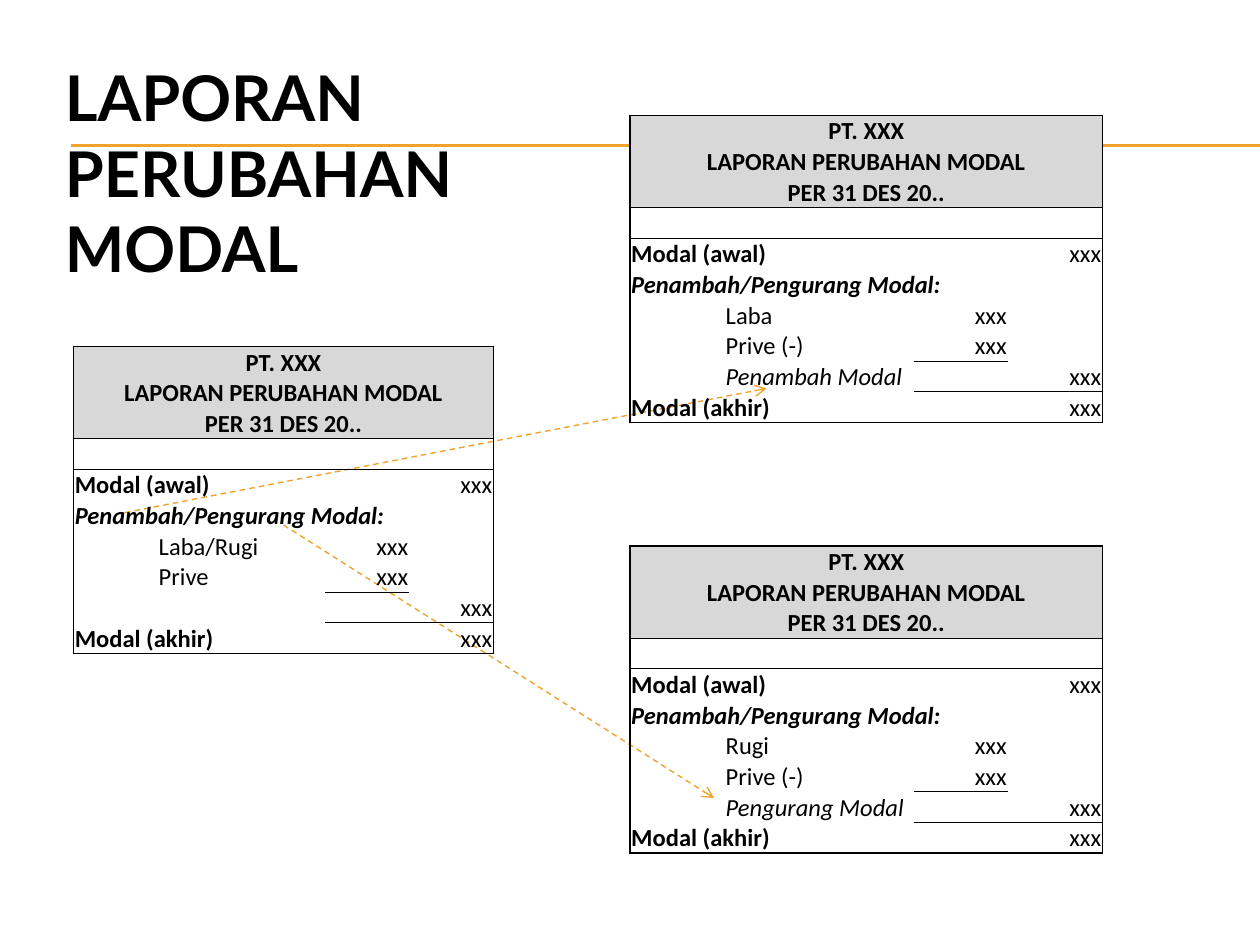
from dataclasses import dataclass

from lxml import etree
from pptx import Presentation
from pptx import util as u
from pptx.dml.color import RGBColor
from pptx.enum import dml, shapes, text
from pptx.oxml.ns import qn


@dataclass(frozen=True)
class Theme:
    ink: str = "000000"
    accent: str = "F0A22E"
    header: str = "D8D8D8"
    title_font: str = "Lato"
    body_font: str = "Calibri"
    title_size: int = 36
    body_size: int = 14
    rule_width: float = 0.75
    arrow_width: float = 0.79
    frame_width: float = 1
    sum_width: float = 0.5


NO_STYLE = "{2D5ABB26-0587-4C30-8999-92F81FD0307C}"
LEFT, CENTER, RIGHT = text.PP_ALIGN.LEFT, text.PP_ALIGN.CENTER, text.PP_ALIGN.RIGHT
COLUMNS, ROWS = 5, 10
HEADER_ROWS = 3
STATEMENT_HEIGHT = 29.25


def grid(count):
    """Length of a number of grid units, twelve to the inch."""
    return u.Inches(count / 12)


class Page:
    def __init__(self, deck, theme):
        self.theme = theme
        self.slide = deck.slides.add_slide(deck.slide_layouts[6])

    def span(self, para, words, font, size, bold=False, italic=False):
        span = para.add_run()
        span.text = words
        span.font.name, span.font.size = font, u.Pt(size)
        span.font.bold, span.font.italic = bold, italic
        span.font.color.rgb = RGBColor.from_string(self.theme.ink)

    def title(self, words, left, top, width, height):
        box = self.slide.shapes.add_textbox(*map(grid, (left, top, width, height)))
        frame = box.text_frame
        frame.word_wrap = True
        frame.auto_size = text.MSO_AUTO_SIZE.SHAPE_TO_FIT_TEXT
        self.span(frame.paragraphs[0], words, self.theme.title_font,
                  self.theme.title_size, bold=True)

    def line(self, start, end, width):
        line = self.slide.shapes.add_connector(
            shapes.MSO_CONNECTOR.STRAIGHT, *map(grid, start + end))
        line.line.color.rgb = RGBColor.from_string(self.theme.accent)
        line.line.width = u.Pt(width)
        etree.SubElement(line.element.spPr, qn("a:effectLst"))
        return line

    def arrow(self, start, end):
        arrow = self.line(start, end, self.theme.arrow_width)
        arrow.line.dash_style = dml.MSO_LINE.DASH
        outline = arrow.element.spPr.find(qn("a:ln"))
        etree.SubElement(outline, qn("a:tailEnd"), type="arrow")

    def entry(self, table, row, column, words, align=LEFT, width=1, **style):
        cell = table.cell(row, column)
        if width > 1:
            cell.merge(table.cell(row, column + width - 1))
        para = cell.text_frame.paragraphs[0]
        para.alignment = align
        self.span(para, words, self.theme.body_font, self.theme.body_size, **style)

    def borders(self, row, column, width):
        """Border widths of a cell: outer frame, header rule and sum rules."""
        frame, thin = self.theme.frame_width, self.theme.sum_width
        sums = {(7, 3), (8, 4)}

        def ruled(above):
            return above == HEADER_ROWS - 1 or (above, column) in sums

        return {
            "L": frame if column == 0 else 0,
            "R": frame if column + width == COLUMNS else 0,
            "T": frame if row == 0 else thin if ruled(row - 1) else 0,
            "B": frame if row == ROWS - 1 else thin if ruled(row) else 0,
        }

    def format_cell(self, cell, row, column):
        cell.margin_left = cell.margin_right = cell.margin_top = u.Inches(0.01)
        cell.margin_bottom = 0
        cell.vertical_anchor = text.MSO_ANCHOR.BOTTOM
        if not cell.text_frame.text:
            para = cell._tc.find(".//" + qn("a:p"))
            etree.SubElement(para, qn("a:endParaRPr"), sz=str(self.theme.body_size * 100))
        width = cell.span_width if cell.is_merge_origin else 1
        properties = cell._tc.get_or_add_tcPr()
        for side, points in self.borders(row, column, width).items():
            if points:
                edge = etree.SubElement(properties, qn("a:ln" + side), w=str(u.Pt(points)))
                fill = etree.SubElement(edge, qn("a:solidFill"))
                etree.SubElement(fill, qn("a:srgbClr"), val=self.theme.ink)
        if row < HEADER_ROWS:
            cell.fill.solid()
            cell.fill.fore_color.rgb = RGBColor.from_string(self.theme.header)
        else:
            cell.fill.background()

    def statement(self, left, top, width, details):
        """Statement of changes in equity; details are (label, columns spanned)."""
        frame = self.slide.shapes.add_table(
            ROWS, COLUMNS, *map(grid, (left, top, width, STATEMENT_HEIGHT)))
        table = frame.table
        table.first_row = table.horz_banding = False
        frame.element.find(".//" + qn("a:tableStyleId")).text = NO_STYLE

        heading = ("PT. XXX", "LAPORAN PERUBAHAN MODAL", "PER 31 DES 20..")
        for row, words in enumerate(heading):
            self.entry(table, row, 0, words, CENTER, COLUMNS, bold=True)
        self.entry(table, 4, 0, "Modal (awal)", width=2, bold=True)
        self.entry(table, 5, 0, "Penambah/Pengurang Modal:", width=4, bold=True, italic=True)
        for row, (label, columns) in enumerate(details, 6):
            self.entry(table, row, 1, label, width=columns, italic=row == 8)
        self.entry(table, 9, 0, "Modal (akhir)", width=2, bold=True)
        for row, column in ((4, 4), (6, 3), (7, 3), (8, 4), (9, 4)):
            self.entry(table, row, column, "xxx", RIGHT)

        for row in range(ROWS):
            for column in range(COLUMNS):
                self.format_cell(table.cell(row, column), row, column)


def main():
    deck = Presentation()
    deck.slide_width, deck.slide_height = grid(120), grid(90)
    page = Page(deck, Theme())
    for height in (13.8, 13.92):
        page.line((6.75, height), (120, height), page.theme.rule_width)
    page.title("LAPORAN PERUBAHAN MODAL", 5, 5, 44, 23)
    page.arrow((11, 49), (73, 37))
    page.arrow((27, 50), (68, 76))
    page.statement(7, 33, 40, [("Laba/Rugi", 2), ("Prive", 1)])
    page.statement(60, 11, 45, [("Laba", 1), ("Prive (-)", 1), ("Penambah Modal", 2)])
    page.statement(60, 52, 45, [("Rugi", 1), ("Prive (-)", 1), ("Pengurang Modal", 2)])
    deck.save("out.pptx")


if __name__ == "__main__":
    main()
